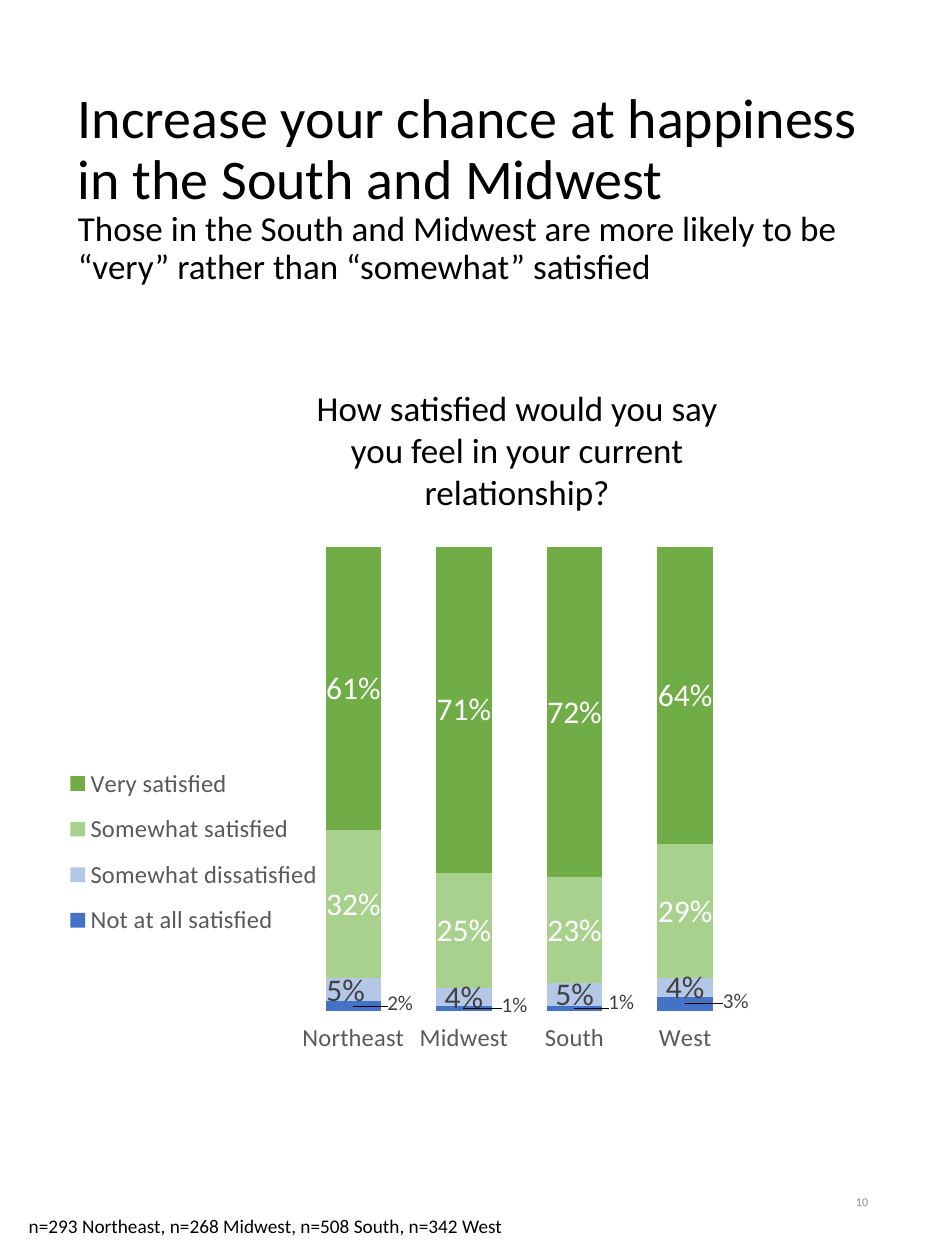
from copy import deepcopy

from lxml.etree import SubElement
from pptx import Presentation
from pptx.chart.data import CategoryChartData
from pptx.dml.color import RGBColor
from pptx.enum.chart import XL_CHART_TYPE, XL_LEGEND_POSITION
from pptx.enum.text import MSO_ANCHOR, PP_ALIGN
from pptx.oxml.ns import qn
from pptx.util import Cm, Pt

FACE = "Calibri"
AREAS = ["Northeast", "Midwest", "South", "West"]
# name, shares, fill, label size, label colour, label shifts by point
LEVELS = [
    ("Not at all satisfied", [0.02, 0.01, 0.01, 0.03], "4472C4", 12, "404040",
     {0: (0.06, -0.005), 1: (0.065, -0.005), 2: (0.06, -0.01), 3: (0.065, -0.005)}),
    ("Somewhat dissatisfied", [0.05, 0.04, 0.05, 0.04], "B4C7E7", 18, "404040",
     {0: (-0.01, 0)}),
    ("Somewhat satisfied", [0.32, 0.25, 0.23, 0.29], "A9D18E", 18, "FFFFFF", {}),
    ("Very satisfied", [0.61, 0.71, 0.72, 0.64], "70AD47", 18, "FFFFFF", {}),
]


def tint(code):
    return RGBColor.from_string(code)


def style(font, size, code="000000"):
    font.name = FACE
    font.size = Pt(size)
    font.color.rgb = tint(code)


def add_text(slide, box, text, size, code="000000",
             align=PP_ALIGN.LEFT, anchor=MSO_ANCHOR.TOP):
    frame = slide.shapes.add_textbox(*map(Cm, box)).text_frame
    frame.word_wrap = True
    frame.vertical_anchor = anchor
    para = frame.paragraphs[0]
    para.text = text
    para.alignment = align
    style(para.font, size, code)


def add_title(slide, box, head, sub):
    frame = slide.shapes.add_textbox(*map(Cm, box)).text_frame
    frame.word_wrap = True
    frame.vertical_anchor = MSO_ANCHOR.MIDDLE
    para = frame.paragraphs[0]
    para.line_spacing = 0.9
    for text, size in ((head, 32), (sub, 20)):
        if para.runs:
            para.add_line_break()
        run = para.add_run()
        run.text = text
        style(run.font, size)


def set_layout(layout, **parts):
    """Fill a c:layout element with manual values, in schema order."""
    manual = SubElement(layout, qn("c:manualLayout"))
    for tag, val in parts.items():
        SubElement(manual, qn(f"c:{tag}")).set("val", str(val))


def shift_labels(labels, moves):
    """Move the labels of single points, keeping the series' label style."""
    root = labels._element
    shared = [kid for kid in root if kid.tag != qn("c:showLeaderLines")]
    for place, (spot, (x, y)) in enumerate(moves.items()):
        label = SubElement(root, qn("c:dLbl"))
        SubElement(label, qn("c:idx")).set("val", str(spot))
        set_layout(SubElement(label, qn("c:layout")), x=x, y=y)
        label.extend(deepcopy(kid) for kid in shared)
        root.insert(place, label)


def add_bars(slide, box):
    data = CategoryChartData(number_format="0%")
    data.categories = AREAS
    for name, shares, *_ in LEVELS:
        data.add_series(name, shares)
    chart = slide.shapes.add_chart(
        XL_CHART_TYPE.COLUMN_STACKED_100, *map(Cm, box), data).chart
    chart.has_title = False
    style(chart.font, 10)

    # Bars and their labels
    plot = chart.plots[0]
    plot.gap_width = 99
    plot.overlap = 100
    plot.vary_by_categories = False
    for series, (_, _, fill, size, code, moves) in zip(plot.series, LEVELS):
        series.format.fill.solid()
        series.format.fill.fore_color.rgb = tint(fill)
        labels = series.data_labels
        labels.show_value = True
        labels.number_format = "0%"
        labels.number_format_is_linked = False
        style(labels.font, size, code)
        shift_labels(labels, moves)

    # Axes
    chart.value_axis.visible = False
    chart.value_axis.has_major_gridlines = False
    axis = chart.category_axis
    axis.format.line.fill.background()
    style(axis.tick_labels.font, 14, "595959")

    # Legend
    chart.has_legend = True
    legend = chart.legend
    legend.position = XL_LEGEND_POSITION.LEFT
    legend.include_in_layout = False
    style(legend.font, 14, "595959")
    layout = legend._element.get_or_add_layout() if hasattr(
        legend._element, "get_or_add_layout") else legend._element.find(qn("c:layout"))
    set_layout(layout, xMode="edge", yMode="edge", x=0.04, y=0.4, w=0.34, h=0.34)

    # Plot area
    area = chart._chartSpace.chart.plotArea
    layout = area.find(qn("c:layout"))
    if layout is None:
        layout = SubElement(area, qn("c:layout"))
        area.insert(0, layout)
    set_layout(layout, layoutTarget="inner", xMode="edge", yMode="edge",
               x=0.344, y=0.045, w=0.568, h=0.798)


def main():
    deck = Presentation()
    deck.slide_width, deck.slide_height = Cm(19.05), Cm(25.4)
    slide = deck.slides.add_slide(deck.slide_layouts[6])

    # Heading
    add_title(slide, (1.32, 1.35, 16.43, 4.9),
              "Increase your chance at happiness in the South and Midwest",
              "Those in the South and Midwest are more likely to be "
              "“very” rather than “somewhat” satisfied")

    # Chart with its question
    add_bars(slide, (0.61, 10.49, 15.7, 11.73))
    add_text(slide, (5.66, 7.67, 9.53, 2.82),
             "How satisfied would you say you feel in your current relationship?",
             20, align=PP_ALIGN.CENTER)

    # Footer
    add_text(slide, (0.33, 24.36, 18.11, 0.74),
             "n=293 Northeast, n=268 Midwest, n=508 South, n=342 West", 11)
    add_text(slide, (13.46, 23.55, 4.29, 1.35), "10", 6.8, "8C8C8C",
             PP_ALIGN.RIGHT, MSO_ANCHOR.MIDDLE)

    deck.save("out.pptx")


if __name__ == "__main__":
    main()
